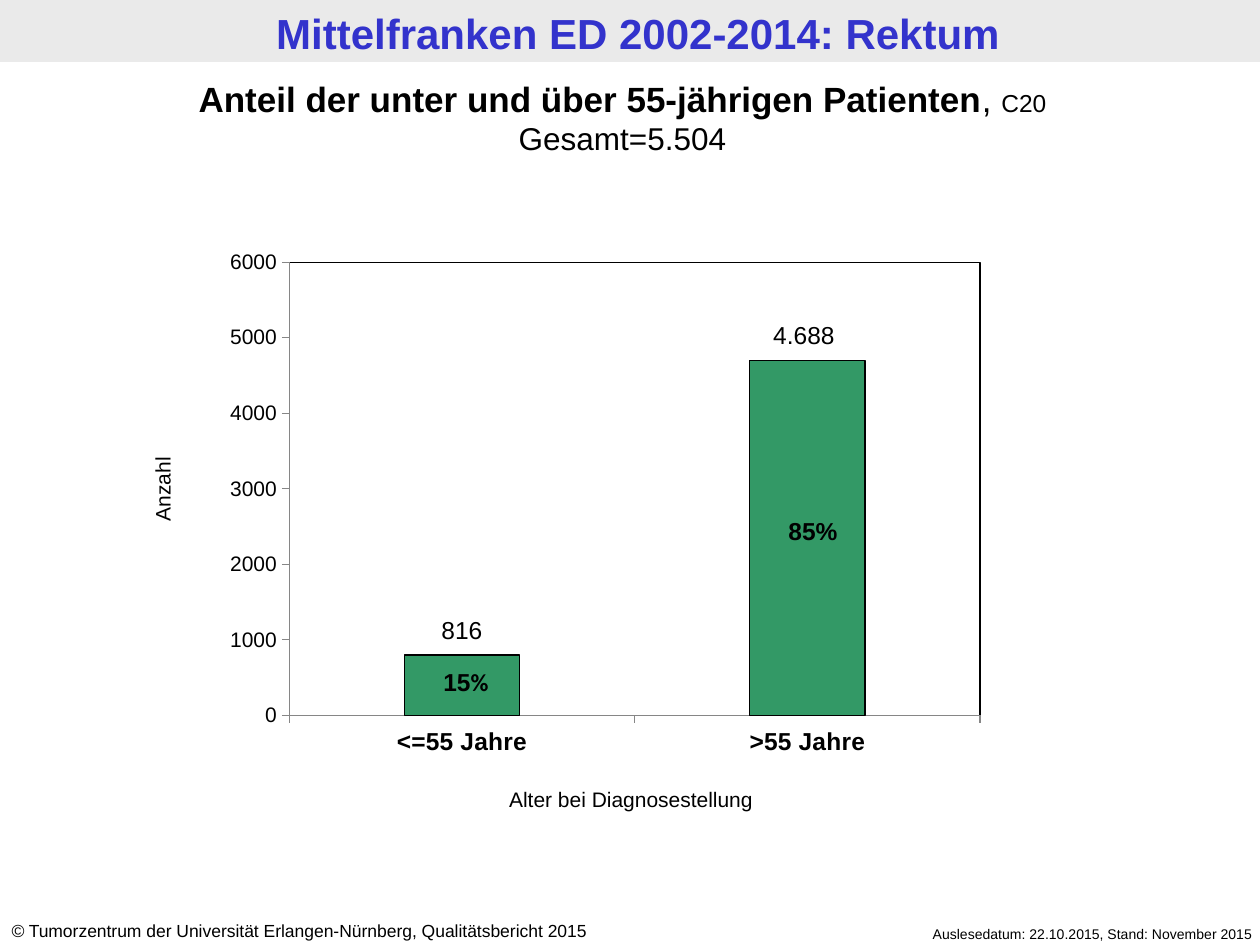
from lxml import etree
from pptx import Presentation
from pptx.chart.data import CategoryChartData
from pptx.dml.color import RGBColor
from pptx.enum.chart import XL_CHART_TYPE, XL_TICK_MARK
from pptx.enum.shapes import MSO_SHAPE
from pptx.enum.text import MSO_ANCHOR, PP_ALIGN
from pptx.oxml import parse_xml
from pptx.oxml.ns import nsdecls, qn
from pptx.util import Pt

PX = 914400 / 126
COLORS = {"band": "EAEAEA", "title": "3333CC", "text": "000000",
          "bar": "339966", "axis": "868686"}
COLUMN = XL_CHART_TYPE.COLUMN_STACKED
RECTANGLE = MSO_SHAPE.RECTANGLE
TICK_OUT, TICK_NONE = XL_TICK_MARK.OUTSIDE, XL_TICK_MARK.NONE
LEFT, CENTER, RIGHT = PP_ALIGN.LEFT, PP_ALIGN.CENTER, PP_ALIGN.RIGHT
TOP = MSO_ANCHOR.TOP
TITLE_ONLY = 5


def emu(*lengths):
    return [round(length * PX) for length in lengths]


def rgb(name):
    return RGBColor.from_string(COLORS[name])


def set_font(font, size, color="text", **formats):
    values = {"name": "Arial", "size": Pt(size), "bold": False, **formats}
    for attribute, value in values.items():
        setattr(font, attribute, value)
    font.color.rgb = rgb(color)


def fill_text(shape, paragraphs, alignment):
    """Each paragraph is a list of (text, font formats) runs."""
    frame = shape.text_frame
    frame.word_wrap = True
    frame.vertical_anchor = TOP
    for index, runs in enumerate(paragraphs):
        paragraph = frame.add_paragraph() if index else frame.paragraphs[0]
        paragraph.alignment = alignment
        for text, formats in runs:
            run = paragraph.add_run()
            run.text = text
            set_font(run.font, **formats)


def add_text(slide, box, paragraphs, alignment=CENTER, rotation=0):
    shape = slide.shapes.add_textbox(*emu(*box))
    shape.rotation = rotation
    fill_text(shape, paragraphs, alignment)


def add_header(slide, box):
    left, top, width, height = box
    # Grey band behind the title
    band = slide.shapes.add_shape(RECTANGLE, *emu(*box))
    band.shadow.inherit = False
    band.fill.solid()
    band.fill.fore_color.rgb = rgb("band")
    band.line.fill.background()
    title = slide.shapes.title
    title.element.addprevious(band.element)
    # Title
    title.left, title.top, title.width, title.height = emu(left + 8, top + 1, width, height)
    fill_text(title, [[("Mittelfranken ED 2002-2014: Rektum",
                        {"size": 24, "bold": True, "color": "title"})]], CENTER)


def add_subtitle(slide, box):
    add_text(slide, box, [
        [("Anteil der unter und über 55-jährigen Patienten", {"size": 20, "bold": True}),
         (", ", {"size": 20}), ("C20", {"size": 14})],
        [("Gesamt=5.504", {"size": 18})]])


def frame_plot(chart, x, y, width, height):
    """Fix the inner plot area and give it a black outline."""
    plot_area = chart.element.find(".//" + qn("c:plotArea"))
    for layout in plot_area.findall(qn("c:layout")):
        plot_area.remove(layout)
    layout = parse_xml(f"<c:layout {nsdecls('c')}><c:manualLayout/></c:layout>")
    settings = {"layoutTarget": "inner", "xMode": "edge", "yMode": "edge",
                "x": x, "y": y, "w": width, "h": height}
    for tag, value in settings.items():
        etree.SubElement(layout[0], qn("c:" + tag)).set("val", str(value))
    plot_area.insert(0, layout)
    plot_area.append(parse_xml(
        f'<c:spPr {nsdecls("c", "a")}><a:noFill/><a:ln w="9525"><a:solidFill>'
        f'<a:srgbClr val="{COLORS["text"]}"/></a:solidFill></a:ln></c:spPr>'))


def add_age_chart(slide, box):
    left, top, width, height = box
    data = CategoryChartData()
    data.categories = ["<=55 Jahre", ">55 Jahre"]
    data.add_series("Series 1", [800, 4700])
    chart = slide.shapes.add_chart(COLUMN, *emu(*box), data).chart
    chart.has_legend = chart.has_title = False
    set_font(chart.font, 18, name="Calibri")
    frame_plot(chart, 0.113, 0.142, 0.786, 0.772)

    # Columns
    plot = chart.plots[0]
    plot.gap_width, plot.overlap, plot.vary_by_categories = 200, 100, False
    columns = plot.series[0].format
    columns.fill.solid()
    columns.fill.fore_color.rgb = rgb("bar")
    columns.line.color.rgb = rgb("text")
    columns.line.width = Pt(0.75)

    # Axes
    for axis, size, bold in ((chart.category_axis, 14, True), (chart.value_axis, 12, False)):
        axis.has_major_gridlines = False
        axis.major_tick_mark, axis.minor_tick_mark = TICK_OUT, TICK_NONE
        axis.format.line.color.rgb = rgb("axis")
        axis.format.line.width = Pt(0.75)
        set_font(axis.tick_labels.font, size, bold=bold)
    value_axis = chart.value_axis
    value_axis.minimum_scale, value_axis.maximum_scale, value_axis.major_unit = 0, 6000, 1000

    # Shares, counts and axis titles
    bold = {"size": 14, "bold": True}
    labels = [(212, 482, [("15", bold), ("%", {**bold, "name": "Calibri"})]),
              (559, 331, [("85%", bold)]),
              (208, 430, [("816", {"size": 14})]),
              (550, 135, [("4.688", {"size": 14})])]
    for x, y, runs in labels:
        add_text(slide, (left + x, top + y, 128, 43), [runs])
    add_text(slide, (left + 231, top + 601, 420, 38),
             [[("Alter bei Diagnosestellung", {"size": 12})]])
    add_text(slide, (left - 192, top + 291, 329, 38), [[("Anzahl", {"size": 12})]], rotation=270)


def add_footer(slide, box):
    left, top, width, height = box
    add_text(slide, (left + width - 422, top + 5, 427, 30),
             [[("Auslesedatum: 22.10.2015, Stand: November 2015", {"size": 8})]], RIGHT)
    add_text(slide, (left - 1, top, 660, height),
             [[("©", {"size": 10, "italic": True}),
               (" Tumorzentrum der Universität Erlangen-Nürnberg, Qualitätsbericht 2015",
                {"size": 10})]], LEFT)


def main():
    presentation = Presentation()
    presentation.slide_width, presentation.slide_height = emu(1260, 945)
    slide = presentation.slides.add_slide(presentation.slide_layouts[TITLE_ONLY])
    add_header(slide, (0, 0, 1260, 62))
    add_footer(slide, (0, 914, 1260, 34))
    add_age_chart(slide, (190, 179, 879, 587))
    add_subtitle(slide, (0, 71, 1245, 93))
    presentation.save("out.pptx")


if __name__ == "__main__":
    main()
